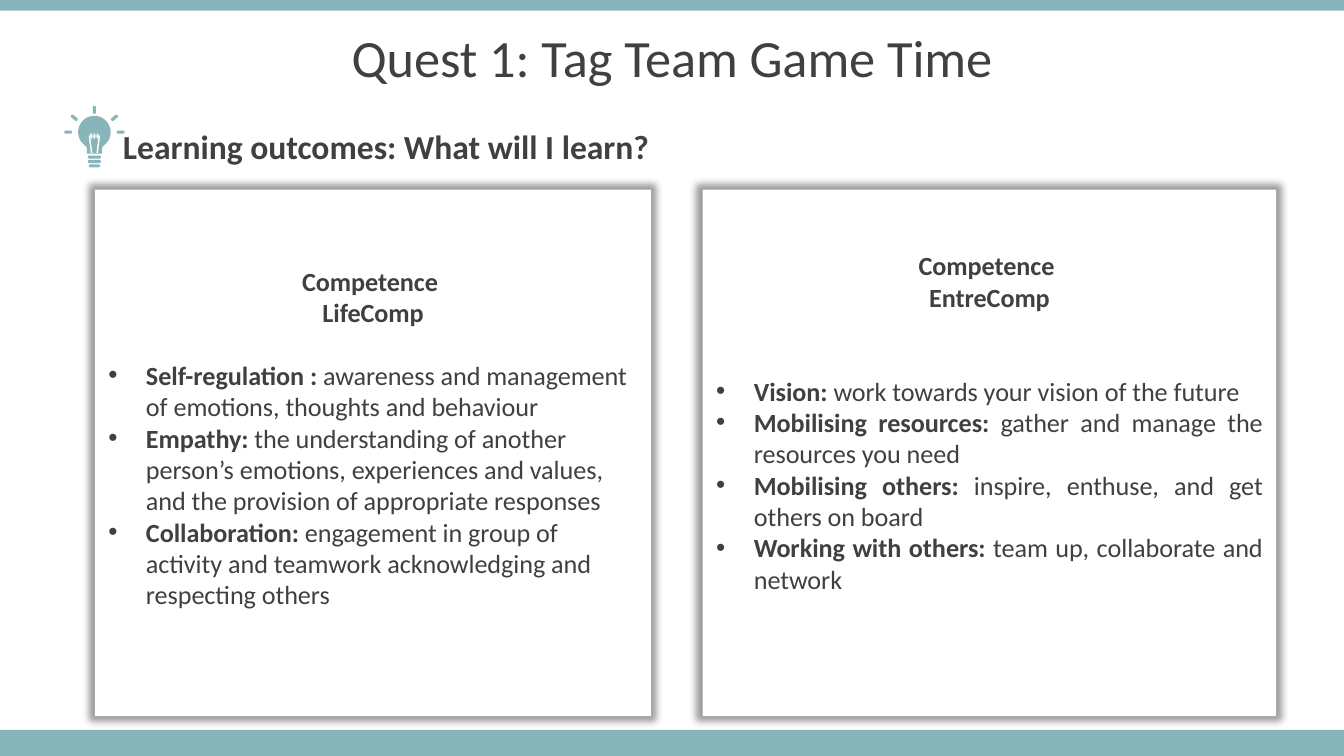
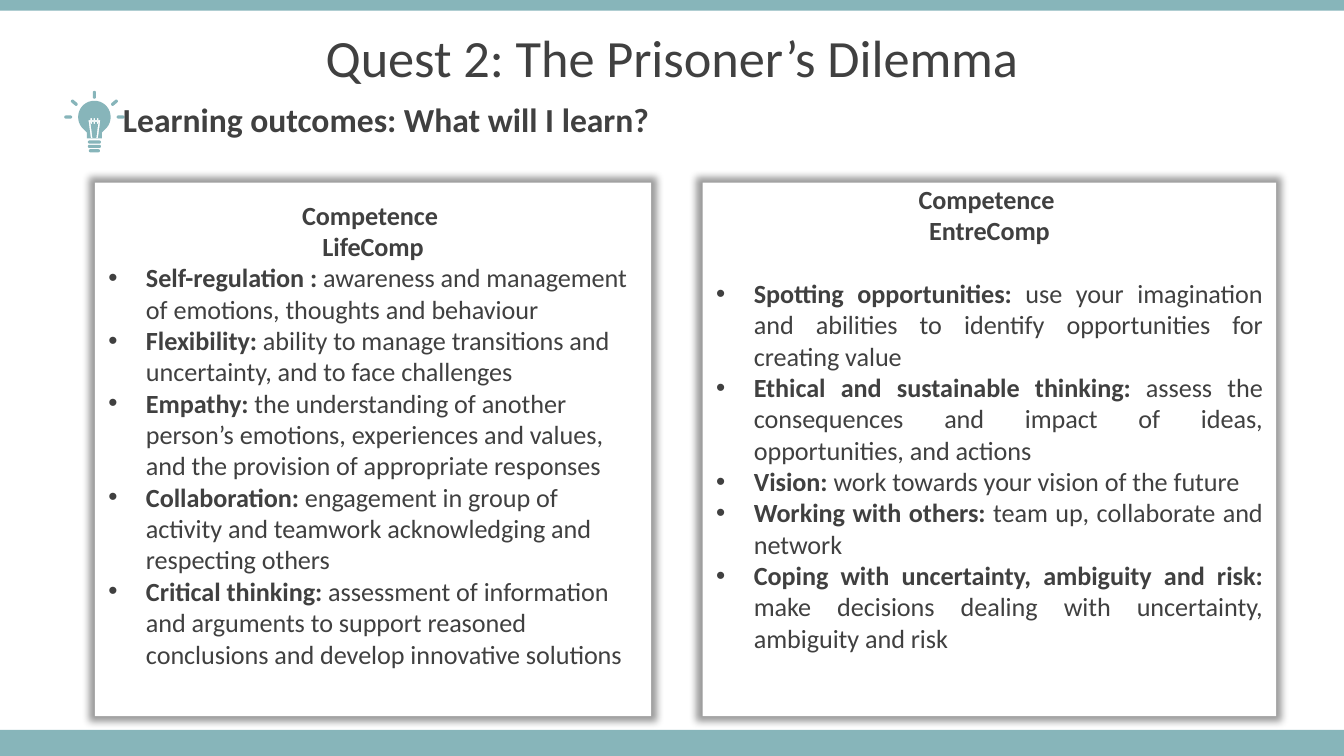
"""Build two quest slides with learning outcomes in paired competence cards."""
from math import cos, radians, sin

from lxml import etree
from pptx import Presentation
from pptx.dml.color import RGBColor
from pptx.enum.shapes import MSO_SHAPE
from pptx.enum.text import MSO_ANCHOR, PP_ALIGN
from pptx.oxml.ns import qn
from pptx.util import Cm, Pt

TEAL = RGBColor(0x87, 0xB5, 0xBA)
WHITE = RGBColor(0xFF, 0xFF, 0xFF)
BLACK = RGBColor(0x00, 0x00, 0x00)
DARK_GREY = RGBColor(0x40, 0x40, 0x40)
FONT = "Calibri"

RECTANGLE = MSO_SHAPE.RECTANGLE
MIDDLE = MSO_ANCHOR.MIDDLE
LEFT, CENTER, JUSTIFY = PP_ALIGN.LEFT, PP_ALIGN.CENTER, PP_ALIGN.JUSTIFY

PAGE_WIDTH, PAGE_HEIGHT = 33.87, 19.05
CARD_SIZE, CARD_LINE = 18.67, 22.4
LINE_HEIGHT = CARD_LINE * 2.54 / 72
CARD_BOTTOM = 18.05
HANGING = 0.95

SELF_REGULATION = ("Self-regulation : ", "awareness and management of emotions, thoughts and behaviour")
EMPATHY = ("Empathy: ", "the understanding of another person’s emotions, experiences and values, "
           "and the provision of appropriate responses")
COLLABORATION = ("Collaboration: ", "engagement in group of activity and teamwork "
                 "acknowledging and respecting others")
VISION = ("Vision: ", "work towards your vision of the future")
WORKING = ("Working with others: ", "team up, collaborate and network")

QUESTS = [
    dict(title="Quest 1: Tag Team Game Time", icon_top=2.67, heading_top=3.16, card_top=4.78,
         life_gap=1, life=[SELF_REGULATION, EMPATHY, COLLABORATION],
         entre_gap=2, entre=[
             VISION,
             ("Mobilising resources: ", "gather and manage the resources you need"),
             ("Mobilising others: ", "inspire, enthuse, and get others on board"),
             WORKING]),
    dict(title="Quest 2: The Prisoner’s Dilemma", icon_top=2.29, heading_top=2.48, card_top=4.6,
         life_gap=0, life=[
             SELF_REGULATION,
             ("Flexibility: ", "ability to manage transitions and uncertainty, and to face challenges"),
             EMPATHY,
             COLLABORATION,
             ("Critical thinking: ", "assessment of information and arguments to support reasoned "
              "conclusions and develop innovative solutions")],
         entre_gap=1, entre=[
             ("Spotting opportunities: ", "use your imagination and abilities to identify "
              "opportunities for creating value"),
             ("Ethical and sustainable thinking: ", "assess the consequences and impact of ideas, "
              "opportunities, and actions"),
             VISION,
             WORKING,
             ("Coping with uncertainty, ambiguity and risk: ", "make decisions dealing with "
              "uncertainty, ambiguity and risk")]),
]


def paint(shape, color):
    """Give a shape a flat fill with no line or shadow."""
    shape.shadow.inherit = False
    shape.fill.solid()
    shape.fill.fore_color.rgb = color
    shape.line.fill.background()


def add_block(page, left, top, width, height, color):
    """Add a flat rectangle."""
    shape = page.shapes.add_shape(RECTANGLE, Cm(left), Cm(top), Cm(width), Cm(height))
    paint(shape, color)
    return shape


def add_span(para, text, size, bold=False):
    """Add one formatted run to a paragraph."""
    span = para.add_run()
    span.text = text
    span.font.name = FONT
    span.font.size = Pt(size)
    span.font.bold = bold
    span.font.color.rgb = DARK_GREY


def add_text(page, text, left, top, width, height, size, bold=False,
             align=LEFT, before=0, spacing=1.0):
    """Add a one-paragraph text box."""
    box = page.shapes.add_textbox(Cm(left), Cm(top), Cm(width), Cm(height))
    frame = box.text_frame
    frame.word_wrap = True
    frame.vertical_anchor = MIDDLE
    para = frame.paragraphs[0]
    para.alignment = align
    para.space_before = Pt(before)
    para.line_spacing = spacing
    add_span(para, text, size, bold)


def add_glow(shape):
    """Put a soft, slightly enlarged shadow around a shape."""
    effects = shape.element.spPr.find(qn("a:effectLst"))
    shadow = etree.SubElement(effects, qn("a:outerShdw"), blurRad=str(Pt(5)), dist="0",
                              sx="102000", sy="102000", algn="ctr", rotWithShape="0")
    color = etree.SubElement(shadow, qn("a:srgbClr"), val=str(BLACK))
    etree.SubElement(color, qn("a:alpha"), val="40000")


def set_bullet(para):
    """Give a paragraph a round bullet with a hanging indent."""
    properties = para._p.get_or_add_pPr()
    properties.set("marL", str(Cm(HANGING)))
    properties.set("indent", str(-Cm(HANGING)))
    etree.SubElement(properties, qn("a:buFont"), typeface="Arial")
    etree.SubElement(properties, qn("a:buChar"), char="•")


def add_card(page, left, top, width, framework, outcomes, gap, tail, align):
    """Add a competence card with gap lines above its bullets and tail lines below."""
    card = add_block(page, left, top, width, CARD_BOTTOM - top, WHITE)
    add_glow(card)
    frame = card.text_frame
    frame.word_wrap = True
    frame.vertical_anchor = MIDDLE
    frame.margin_left = frame.margin_right = Cm(0.34)
    frame.margin_top = Cm(0.19)
    frame.margin_bottom = Cm(0.17 + tail * LINE_HEIGHT)
    for index, text in enumerate(("Competence ", framework)):
        para = frame.add_paragraph() if index else frame.paragraphs[0]
        para.alignment = CENTER
        add_span(para, text, CARD_SIZE, bold=True)
    for index, (name, meaning) in enumerate(outcomes):
        para = frame.add_paragraph()
        para.alignment = align
        para.space_before = Pt(0 if index else gap * CARD_LINE)
        set_bullet(para)
        add_span(para, name, CARD_SIZE, bold=True)
        add_span(para, meaning, CARD_SIZE)


def arc(x, y, radius, start, stop, step=10):
    """List the points of a circular arc, angles in degrees."""
    return [(x + radius * cos(radians(angle)), y + radius * sin(radians(angle)))
            for angle in range(start, stop + 1, step)]


def pill(x, y, length, angle=0):
    """List the points of a thin round-ended bar around a centre point."""
    radius = 0.04
    reach = length / 2 - radius
    across, down = reach * cos(radians(angle)), reach * sin(radians(angle))
    return (arc(x + across, y + down, radius, angle - 90, angle + 90, 30)
            + arc(x - across, y - down, radius, angle + 90, angle + 270, 30))


def bulb_outlines():
    """List the closed outlines of a shining bulb, centred on its glass."""
    neck = 0.19
    glass = arc(0, 0, 0.41, 130, 410)
    glass += [(neck, 0.39), (neck, 0.54), (-neck, 0.54), (-neck, 0.39)]
    filament = [(-0.09, 0.53), (-0.15, 0.08), (0.15, 0.08), (0.09, 0.53),
                (0.05, 0.53), (0.1, 0.12), (-0.1, 0.12), (-0.05, 0.53)]
    ticks = [[(x - 0.02, top), (x + 0.02, top), (x + 0.02, top + 0.05), (x - 0.02, top + 0.05)]
             for x in (-0.08, 0, 0.08) for top in (0.03, 0.12)]
    rays = [pill(0.66 * cos(radians(angle)), 0.56 * sin(radians(angle)), 0.2, angle)
            for angle in (180, 220, 270, 320, 360)]
    base = [pill(0, y, length) for y, length in ((0.63, 0.33), (0.74, 0.33), (0.85, 0.28))]
    return [glass, filament, *ticks, *rays, *base]


def add_bulb(page, left, top):
    """Draw the bulb as one shape whose filament is cut out."""
    x, y = left + 0.78, top + 0.66
    builder = None
    for outline in bulb_outlines():
        points = [(Cm(x + across), Cm(y + down)) for across, down in outline]
        if builder is None:
            builder = page.shapes.build_freeform(*points[0], scale=1.0)
        else:
            builder.move_to(*points[0])
        builder.add_line_segments(points[1:], close=True)
    paint(builder.convert_to_shape(), TEAL)


def add_quest(deck, quest):
    """Add one quest page."""
    page = deck.slides.add_slide(deck.slide_layouts[6])
    for top, height in ((18.39, 0.66), (0, 0.27)):
        add_block(page, 0, top, PAGE_WIDTH, height, TEAL)
    add_text(page, quest["title"], 0, 0.46, PAGE_WIDTH, 2.13, 37.33,
             align=CENTER, before=10, spacing=0.9)
    add_bulb(page, 1.6, quest["icon_top"])
    add_text(page, "Learning outcomes: What will I learn?", 2.85, quest["heading_top"],
             19.5, 1.04, 24, bold=True, before=4.8)
    add_card(page, 2.39, quest["card_top"], 14.02, "LifeComp", quest["life"],
             gap=quest["life_gap"], tail=1, align=LEFT)
    add_card(page, 17.71, quest["card_top"], 14.45, "EntreComp", quest["entre"],
             gap=quest["entre_gap"], tail=2, align=JUSTIFY)


def main():
    """Build and save the deck."""
    deck = Presentation()
    deck.slide_width, deck.slide_height = Cm(PAGE_WIDTH), Cm(PAGE_HEIGHT)
    for quest in QUESTS:
        add_quest(deck, quest)
    deck.save("out.pptx")


if __name__ == "__main__":
    main()
